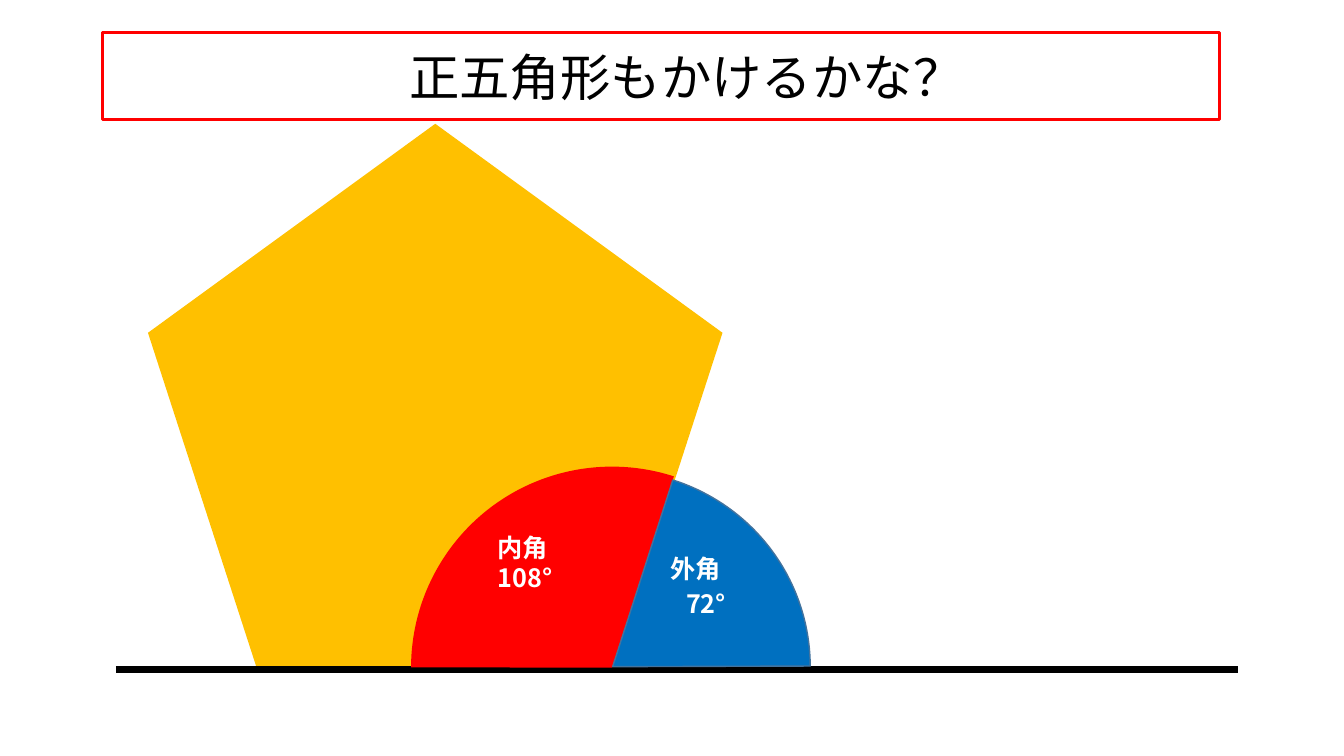
from lxml import etree
from pptx import Presentation
from pptx.dml.color import RGBColor
from pptx.enum.shapes import MSO_CONNECTOR, MSO_SHAPE
from pptx.enum.text import MSO_ANCHOR, MSO_AUTO_SIZE, PP_ALIGN
from pptx.oxml.ns import qn
from pptx.util import Cm, Pt

PENTAGON = MSO_SHAPE.REGULAR_PENTAGON
PIE = MSO_SHAPE.PIE
STRAIGHT = MSO_CONNECTOR.STRAIGHT
MIDDLE = MSO_ANCHOR.MIDDLE
CENTER = PP_ALIGN.CENTER
NO_AUTOFIT = MSO_AUTO_SIZE.NONE
FONT = "Noto Sans CJK JP"
ADJUSTMENT_PER_DEGREE = 0.6


def color(hex_string):
    return RGBColor.from_string(hex_string)


def write(shape, text, size, text_color, bold):
    shape.text_frame.text = text
    shape.text_frame.word_wrap = True
    for paragraph in shape.text_frame.paragraphs:
        paragraph.font.size = Pt(size)
        paragraph.font.bold = bold
        paragraph.font.color.rgb = color(text_color)
        paragraph.font.name = FONT
        properties = paragraph._p.pPr.find(qn("a:defRPr"))
        etree.SubElement(properties, qn("a:ea"), typeface=FONT)


presentation = Presentation()
presentation.slide_width = Cm(33.87)
presentation.slide_height = Cm(19.05)
slide = presentation.slides.add_slide(presentation.slide_layouts[5])

title = slide.shapes.title
title.left, title.top, title.width, title.height = Cm(2.59), Cm(0.81), Cm(28.14), Cm(2.21)
title.line.color.rgb = color("FF0000")
title.line.width = Pt(2.25)
write(title, "　正五角形もかけるかな？", 36, "000000", False)
title.text_frame.auto_size = NO_AUTOFIT
title.text_frame.vertical_anchor = MIDDLE
title.text_frame.paragraphs[0].alignment = CENTER

pentagon = slide.shapes.add_shape(PENTAGON, Cm(3.73), Cm(3.12), Cm(14.48), Cm(13.79))
pentagon.shadow.inherit = False
pentagon.fill.solid()
pentagon.fill.fore_color.rgb = color("FFC000")
pentagon.line.fill.background()

baseline = slide.shapes.add_connector(STRAIGHT, Cm(2.92), Cm(16.87), Cm(31.19), Cm(16.87))
baseline.line.color.rgb = color("000000")
baseline.line.width = Pt(4.5)
etree.SubElement(baseline._element.spPr, qn("a:effectLst"))

angles = [
    ((10.36, 11.76, 10.13, 10.13), (180.08, 287.93), "FF0000", None,
     "内角\n108°", (12.29, 13.28, 4.24, 2.79)),
    ((10.46, 11.86, 9.96, 9.88), (287.88, 359.82), "0070C0", "43739E",
     "外角", (16.64, 13.82, 2.97, 1.8)),
]
for sector_box, degrees, fill_color, line_color, text, label_box in angles:
    group = slide.shapes.add_group_shape()
    sector = group.shapes.add_shape(PIE, *map(Cm, sector_box))
    sector.shadow.inherit = False
    for index, degree in enumerate(degrees):
        sector.adjustments[index] = degree * ADJUSTMENT_PER_DEGREE
    sector.fill.solid()
    sector.fill.fore_color.rgb = color(fill_color)
    if line_color:
        sector.line.color.rgb = color(line_color)
        sector.line.width = Pt(1)
    else:
        sector.line.fill.background()
    label = group.shapes.add_textbox(*map(Cm, label_box))
    write(label, text, 18, "FFFFFF", True)

exterior_value = slide.shapes.add_textbox(Cm(17.04), Cm(14.71), Cm(2.97), Cm(1.8))
write(exterior_value, "72°", 18, "FFFFFF", True)

presentation.save("out.pptx")
